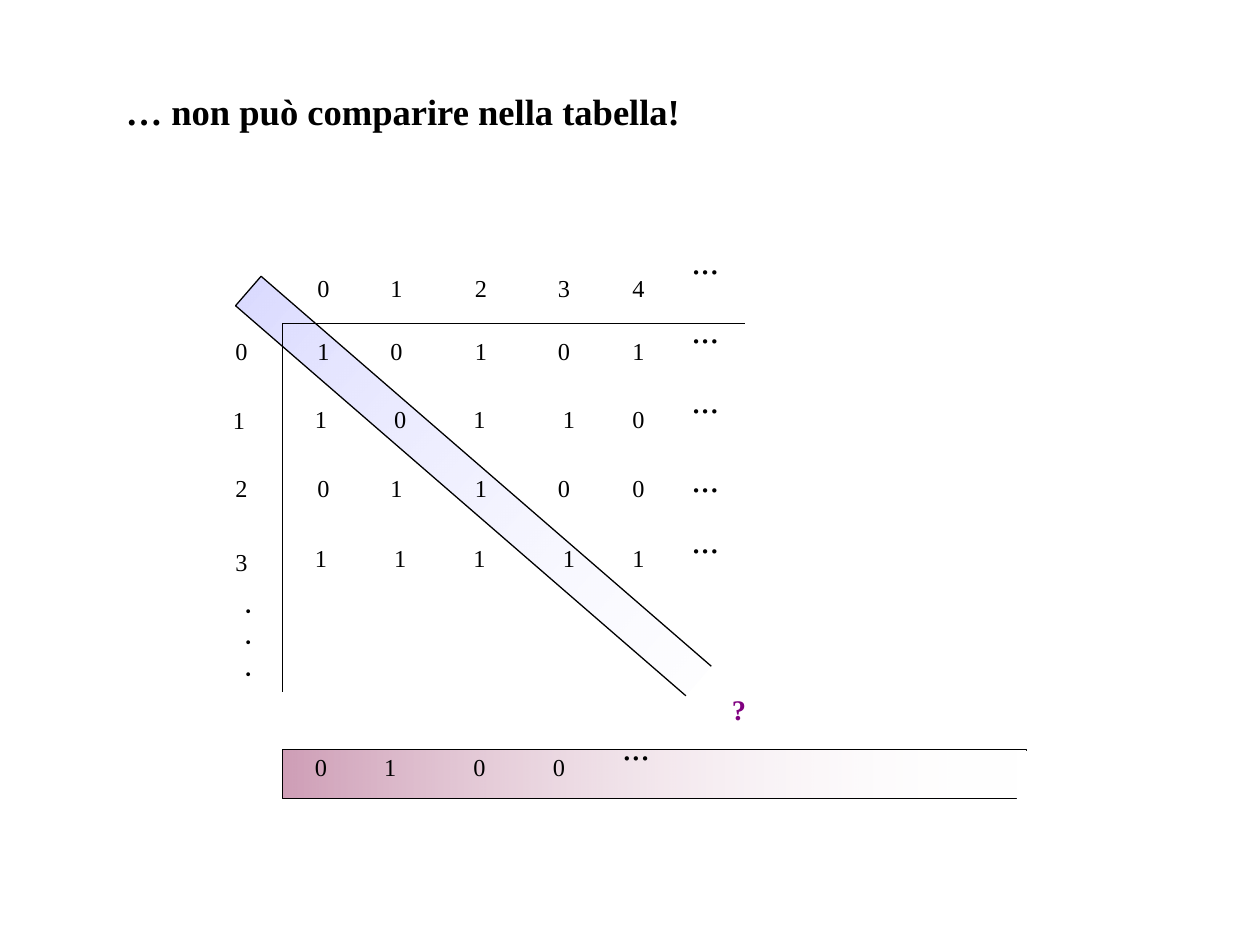
from lxml import etree
from pptx import Presentation
from pptx.dml.color import RGBColor
from pptx.enum.shapes import MSO_CONNECTOR, MSO_SHAPE
from pptx.enum.text import MSO_AUTO_SIZE
from pptx.oxml.ns import qn
from pptx.util import Inches, Pt

RECT = MSO_SHAPE.RECTANGLE
LINE = MSO_CONNECTOR.STRAIGHT
GROW = MSO_AUTO_SIZE.SHAPE_TO_FIT_TEXT

FONT = "Times New Roman"
HEX = {"ink": "000000", "paper": "FFFFFF", "beam": "CCCCFF",
       "bar": "993366", "ask": "800080"}

# Grid: left edges of the columns, top edges of the rows
EVEN = (2.42, 3.0, 3.67, 4.33, 4.92)
ODD = (2.4, 3.03, 3.66, 4.37, 4.92)
ROWS = (
    (2.08, EVEN, "01234"),
    (2.58, EVEN, "10101"),
    (3.12, ODD, "10110"),
    (3.67, EVEN, "01100"),
    (4.22, ODD, "11111"),
)
SIDE = (2.58, 3.13, 3.67, 4.25)
MORE = (1.78, 2.33, 2.88, 3.51, 3.99)
LEFT, TOP = 2.24, 2.57
CELL = (0.37, 0.5)
DOTS = (0.58, 0.7)


def color(name):
    return RGBColor.from_string(HEX[name])


def label(shapes, text, x, y, dims, size=24, ink="ink", bold=False):
    """Raised text on one line."""
    box = shapes.add_textbox(*map(Inches, (x, y, *dims)))
    frame = box.text_frame
    frame.text = text
    frame.word_wrap = False
    frame.auto_size = GROW
    run = frame.paragraphs[0].runs[0]
    run.font.name = FONT
    run.font.size = Pt(size)
    run.font.bold = bold
    run.font.color.rgb = color(ink)
    run._r.get_or_add_rPr().set("baseline", "30000")


def digits(shapes, text, cols, y):
    for x, digit in zip(cols, text):
        label(shapes, digit, x, y, CELL)


def block(shapes, x, y, w, h, turn=0):
    """White patch without outline."""
    rect = shapes.add_shape(RECT, *map(Inches, (x, y, w, h)))
    rect.shadow.inherit = False
    rect.rotation = turn
    rect.fill.solid()
    rect.fill.fore_color.rgb = color("paper")
    rect.line.fill.background()
    return rect


def fade(shapes, x, y, w, h, tint, alpha, turn=0):
    """Outlined strip that fades out to the right."""
    rect = block(shapes, x, y, w, h, turn)
    rect.line.color.rgb = color("ink")
    rect.line.width = Pt(0.75)
    rect.fill.gradient()
    rect.fill.gradient_angle = 0
    ends = ((0, tint, alpha), (1, "paper", 0))
    for stop, (place, name, share) in zip(rect.fill.gradient_stops, ends):
        stop.position = place
        stop.color.rgb = color(name)
    tones = rect._element.spPr.find(qn("a:gradFill")).iter(qn("a:srgbClr"))
    for tone, end in zip(tones, ends):
        etree.SubElement(tone, qn("a:alpha")).set("val", str(end[2] * 1000))


def rule(shapes, x, y):
    """Axis from the table's corner."""
    line = shapes.add_connector(LINE, *map(Inches, (LEFT, TOP, x, y)))
    line.line.color.rgb = color("ink")
    line.line.width = Pt(0.75)
    etree.SubElement(line._element.spPr, qn("a:effectLst"))


def table(shapes):
    # Diagonal strip with its open end
    fade(shapes, 1.26, 4.06, 5.82, 0.31, "beam", 73, 40.9)
    block(shapes, 6.34, 5.95, 0.24, 0.39, 42.9)
    block(shapes, 5.39, 5.64, 1.34, 0.39, 40.7)

    # Axes
    rule(shapes, 5.91, TOP)
    rule(shapes, LEFT, 5.49)

    # Header and rows of digits, each with an ellipsis
    for (y, cols, text), dot in zip(ROWS, MORE):
        digits(shapes, text, cols, y)
        label(shapes, "...", 5.39, dot, DOTS, 36)

    # Row numbers
    side = shapes.add_group_shape().shapes
    for row, y in enumerate(SIDE):
        label(side, str(row), 1.75 if row == 1 else 1.77, y, CELL)

    # Vertical ellipsis
    dots = shapes.add_group_shape().shapes
    for step in range(3):
        label(dots, "·", 1.83, 4.58 + step * 0.25, (0.31, 0.63), 32)


def answer(shapes):
    # Flipped diagonal
    group = shapes.add_group_shape().shapes
    fade(group, LEFT, 5.95, 5.91, 0.39, "bar", 48)
    digits(group, "0100", (2.4, 2.95, 3.66, 4.29), 5.88)
    block(group, 8.07, 5.96, 0.16, 0.39)
    label(group, "...", 4.84, 5.64, DOTS, 36)
    label(shapes, "?", 5.71, 5.4, (0.4, 0.57), 28, "ask", True)


def main():
    deck = Presentation()
    deck.slide_width, deck.slide_height = Inches(10), Inches(7.5)
    shapes = deck.slides.add_slide(deck.slide_layouts[6]).shapes
    label(shapes, "… non può comparire nella tabella!", 0.9, 0.6,
          (7.8, 0.7), 36, bold=True)
    table(shapes)
    answer(shapes)
    deck.save("out.pptx")


if __name__ == "__main__":
    main()
